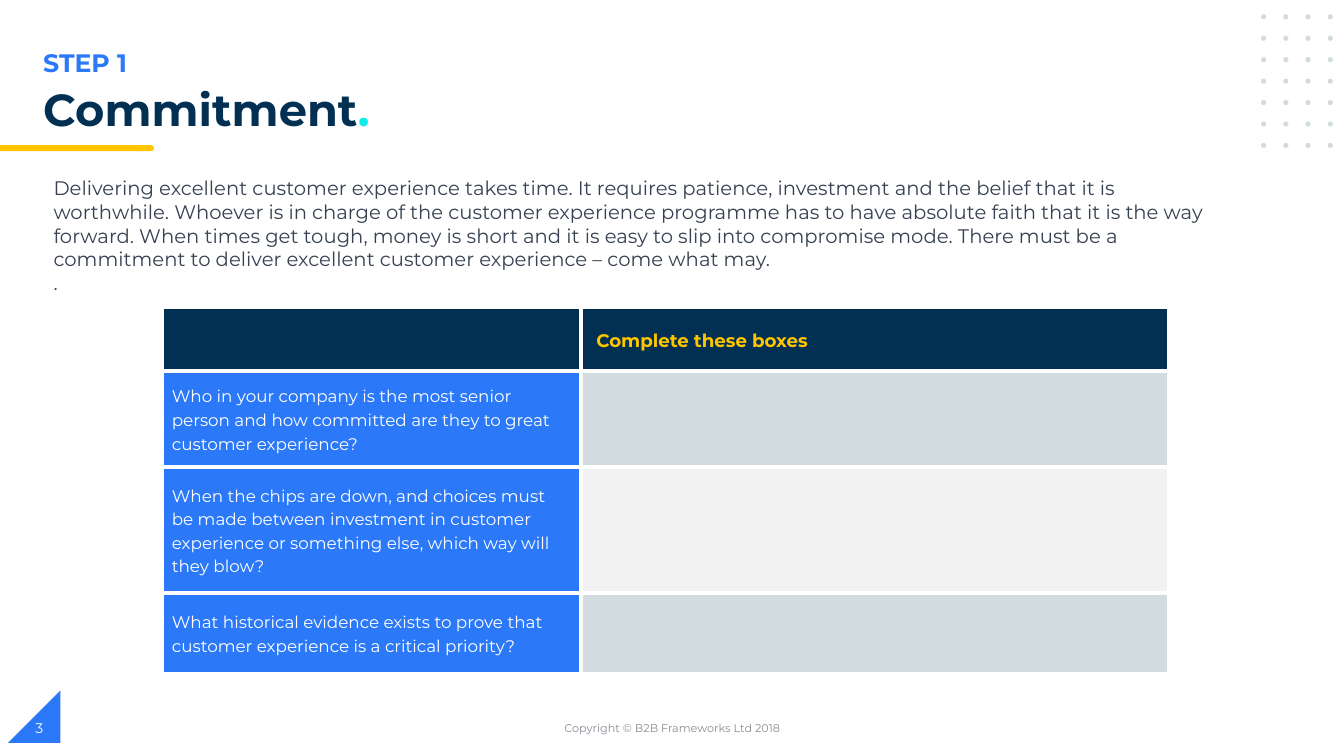
from itertools import product

from lxml.etree import SubElement
from pptx import Presentation
from pptx.dml.color import RGBColor
from pptx.enum.shapes import MSO_SHAPE
from pptx.enum.text import MSO_ANCHOR, PP_ALIGN
from pptx.oxml.ns import qn
from pptx.util import Cm, Pt

COLOURS = {
    "navy": "023053",
    "blue": "2B79F8",
    "yellow": "FFC600",
    "cyan": "0EECEC",
    "mist": "D1DBE0",
    "pale": "F2F2F2",
    "slate": "374151",
    "grey": "888C97",
    "white": "FFFFFF",
}
INTRO = (
    "Delivering excellent customer experience takes time. It requires patience, investment "
    "and the belief that it is worthwhile. Whoever is in charge of the customer experience "
    "programme has to have absolute faith that it is the way forward. When times get tough, "
    "money is short and it is easy to slip into compromise mode. There must be a commitment "
    "to deliver excellent customer experience – come what may."
)
QUESTIONS = [
    ("Who in your company is the most senior person and how committed are they to great "
     "customer experience?", 2.41, "mist"),
    ("When the chips are down, and choices must be made between investment in customer "
     "experience or something else, which way will they blow?", 3.18, "pale"),
    ("What historical evidence exists to prove that customer experience is a critical "
     "priority?", 2.03, "mist"),
]


def colour(name):
    """Return the palette colour of that name."""
    return RGBColor.from_string(COLOURS[name])


def write(paragraph, text, size=14, tint="slate", bold=False, align=PP_ALIGN.LEFT, spacing=None):
    """Append formatted text to a paragraph."""
    paragraph.alignment = align
    if spacing:
        paragraph.line_spacing = spacing
    run = paragraph.add_run()
    run.text = text
    run.font.name = "Montserrat"
    run.font.size = Pt(size)
    run.font.bold = bold
    run.font.color.rgb = colour(tint)


def add_frame(slide, left, top, width, height, anchor=MSO_ANCHOR.TOP):
    """Add a wrapping text box and return its text frame."""
    frame = slide.shapes.add_textbox(Cm(left), Cm(top), Cm(width), Cm(height)).text_frame
    frame.word_wrap = True
    frame.vertical_anchor = anchor
    return frame


def add_block(slide, kind, left, top, width, height, tint):
    """Add a plain filled shape."""
    block = slide.shapes.add_shape(kind, Cm(left), Cm(top), Cm(width), Cm(height))
    block.shadow.inherit = False
    block.fill.solid()
    block.fill.fore_color.rgb = colour(tint)
    block.line.fill.background()
    return block


def add_dot_grid(slide, left, top, columns=4, rows=7, pitch_x=0.56, pitch_y=0.54):
    """Place the corner pattern of dots."""
    for row, column in product(range(rows), range(columns)):
        add_block(slide, MSO_SHAPE.OVAL, left + column * pitch_x, top + row * pitch_y,
                  0.13, 0.13, "mist")


def add_heading(slide, left, top, width):
    """Place the step label, the title and the yellow underline."""
    step = add_frame(slide, left, top, width, 1.02)
    write(step.paragraphs[0], "STEP 1", size=18, tint="blue", bold=True)
    title = add_frame(slide, left, top + 1.02, width, 1.02).paragraphs[0]
    write(title, "Commitment", size=32, tint="navy", bold=True, spacing=0.9)
    write(title, ".", size=32, tint="cyan", bold=True, spacing=0.9)
    underline = top + 2.6
    add_block(slide, MSO_SHAPE.FLOWCHART_TERMINATOR, 3.4, underline, 0.48, 0.15, "yellow")
    add_block(slide, MSO_SHAPE.RECTANGLE, 0, underline, 3.58, 0.15, "yellow")


def add_intro(slide, left, top, width, height):
    """Place the introductory paragraph and its closing point."""
    frame = add_frame(slide, left, top, width, height)
    write(frame.paragraphs[0], INTRO)
    write(frame.add_paragraph(), ".")


def style_cell(cell, tint, indent=0.25):
    """Fill a cell, set its margins and draw its white borders."""
    cell.vertical_anchor = MSO_ANCHOR.MIDDLE
    cell.margin_left, cell.margin_right = Cm(indent), Cm(0.25)
    cell.margin_top = cell.margin_bottom = 0
    properties = cell._tc.get_or_add_tcPr()
    for side in ("a:lnL", "a:lnR", "a:lnT", "a:lnB"):
        border = SubElement(properties, qn(side), w=str(Pt(3)))
        SubElement(SubElement(border, qn("a:solidFill")), qn("a:srgbClr"), val=COLOURS["white"])
    cell.fill.solid()
    cell.fill.fore_color.rgb = colour(tint)


def add_question_table(slide, left, top, widths=(10.57, 14.81), header_height=1.6):
    """Place the table of questions with empty answer boxes."""
    heights = [header_height] + [height for _, height, _ in QUESTIONS]
    table = slide.shapes.add_table(len(heights), len(widths), Cm(left), Cm(top),
                                   Cm(sum(widths)), Cm(sum(heights))).table
    for column, width in zip(table.columns, widths):
        column.width = Cm(width)
    for row, height in zip(table.rows, heights):
        row.height = Cm(height)
    style_cell(table.cell(0, 0), "navy")
    header = table.cell(0, 1)
    style_cell(header, "navy", indent=0.38)
    write(header.text_frame.paragraphs[0], "Complete these boxes", size=13, tint="yellow",
          bold=True, spacing=1.15)
    for row, (question, _, answer_tint) in enumerate(QUESTIONS, start=1):
        prompt = table.cell(row, 0)
        style_cell(prompt, "blue")
        write(prompt.text_frame.paragraphs[0], question, size=12, tint="white", spacing=1.15)
        style_cell(table.cell(row, 1), answer_tint)


def add_footer(slide, left, top):
    """Place the page corner, the page number and the copyright line."""
    corner = add_block(slide, MSO_SHAPE.RIGHT_TRIANGLE, left, top, 1.32, 1.32, "blue")
    corner.rotation = 270
    line = top + 0.43
    notice = add_frame(slide, left + 11.03, line, 11.43, 1.02, MSO_ANCHOR.MIDDLE)
    write(notice.paragraphs[0], "Copyright © B2B Frameworks Ltd 2018", size=8, tint="grey",
          align=PP_ALIGN.CENTER)
    number = add_frame(slide, left + 0.44, line, 7.62, 1.02, MSO_ANCHOR.MIDDLE)
    write(number.paragraphs[0], "3", size=10, tint="white")


def main():
    """Build and save the slide."""
    presentation = Presentation()
    presentation.slide_width, presentation.slide_height = Cm(33.87), Cm(19.05)
    slide = presentation.slides.add_slide(presentation.slide_layouts[6])
    add_dot_grid(slide, 31.78, 0.36)
    add_heading(slide, 0.84, 1.06, 19.7)
    add_intro(slide, 1.1, 4.32, 29.64, 3.25)
    add_question_table(slide, 4.08, 7.75)
    add_footer(slide, 0.2, 17.4)
    presentation.save("out.pptx")


if __name__ == "__main__":
    main()
